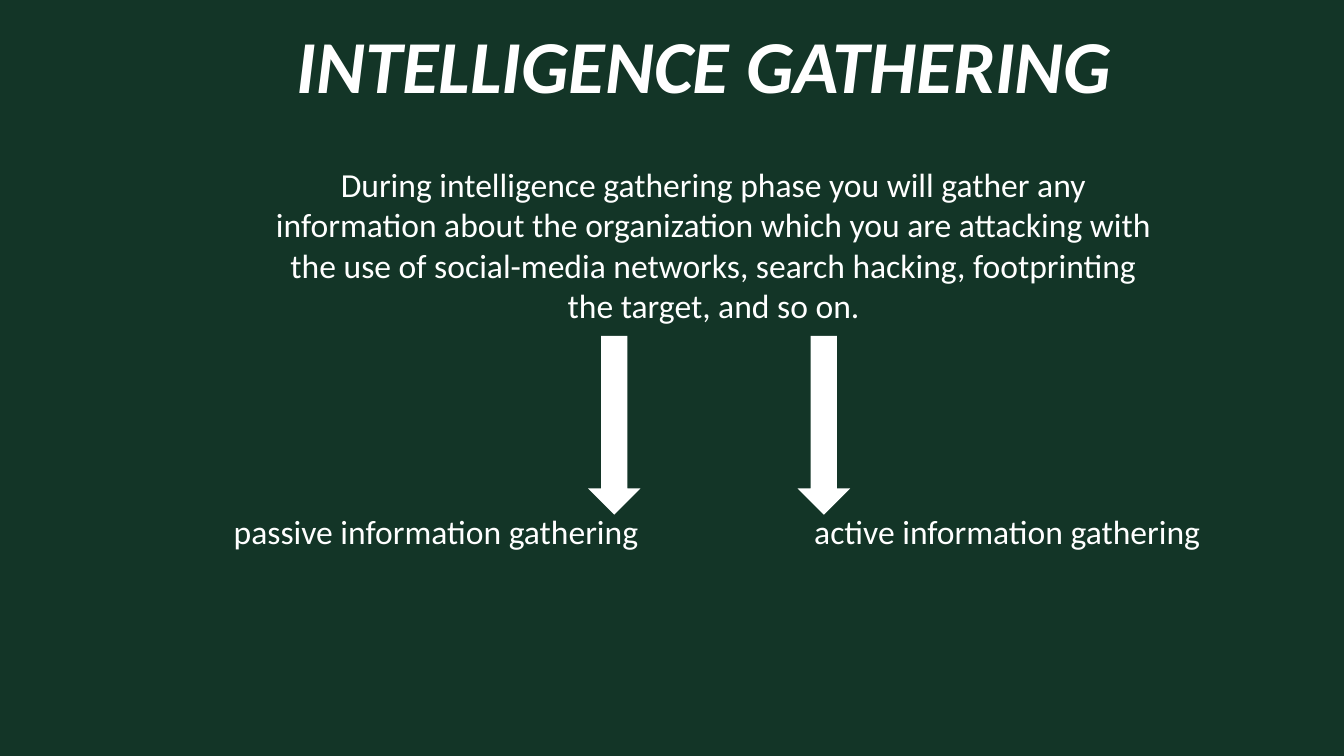
from pptx import Presentation
from pptx.dml.color import RGBColor
from pptx.enum.shapes import MSO_SHAPE as Shape
from pptx.enum.text import MSO_ANCHOR as Anchor, PP_ALIGN as Align
from pptx.util import Emu, Pt

EMU_PER_PX = 4572  # 200 px to the inch
FONT = "Calibri"
COLORS = {"background": "133527", "light": "FFFFFF"}

INTRO = (
    "During intelligence gathering phase you will gather any information about "
    "the organization which you are attacking with the use of social-media "
    "networks, search hacking, footprinting the target, and so on."
)
# Each branch: arrow left, label left, label width, label
BRANCHES = [
    (875, 328, 642, "passive information gathering"),
    (1187, 1192, 614, "active information gathering"),
]


def px(length):
    return Emu(length * EMU_PER_PX)


def color(name):
    return RGBColor.from_string(COLORS[name])


def paint(fill, name):
    fill.solid()
    fill.fore_color.rgb = color(name)


def write(frame, text, size, align=Align.LEFT, bold=False, italic=False):
    para = frame.paragraphs[0]
    para.alignment = align
    span = para.add_run()
    span.text = text
    font = span.font
    font.name, font.size = FONT, Pt(size)
    font.bold, font.italic = bold, italic
    font.color.rgb = color("light")


def set_title(page, text, left, top, width, height):
    title = page.shapes.title
    title.left, title.top = px(left), px(top)
    title.width, title.height = px(width), px(height)
    paint(title.fill, "background")
    frame = title.text_frame
    frame.vertical_anchor = Anchor.MIDDLE
    frame.word_wrap = True
    write(frame, text, 40, bold=True, italic=True)


def add_text(page, text, left, top, width, height, align=Align.LEFT, wrap=True):
    box = page.shapes.add_textbox(px(left), px(top), px(width), px(height))
    box.text_frame.word_wrap = wrap
    write(box.text_frame, text, 18, align)


def add_down_arrow(page, left, top, width, height):
    arrow = page.shapes.add_shape(
        Shape.DOWN_ARROW, px(left), px(top), px(width), px(height)
    )
    arrow.shadow.inherit = False
    paint(arrow.fill, "light")
    arrow.line.fill.background()


def main():
    deck = Presentation()
    deck.slide_width, deck.slide_height = px(2000), px(1125)
    page = deck.slides.add_slide(deck.slide_layouts[5])
    paint(page.background.fill, "background")

    # Title and introduction
    set_title(page, "INTELLIGENCE GATHERING", 421, 0, 1296, 188)
    add_text(page, INTRO, 375, 234, 1374, 260, Align.CENTER)

    # Two kinds of gathering, each under its arrow
    for arrow_left, label_left, label_width, label in BRANCHES:
        add_down_arrow(page, arrow_left, 500, 78, 266)
        add_text(page, label, label_left, 751, label_width, 80, wrap=False)

    deck.save("out.pptx")


if __name__ == "__main__":
    main()
